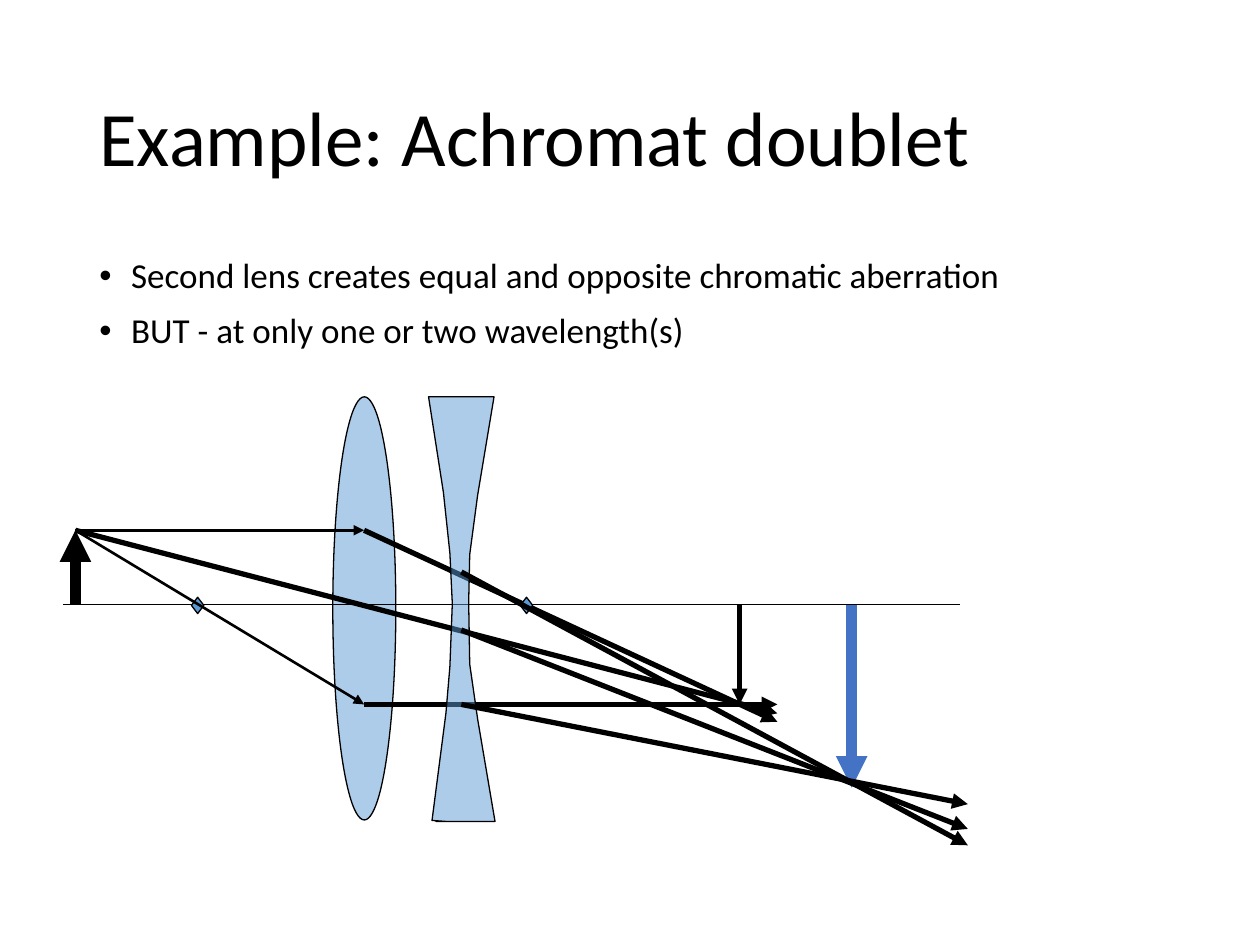
from lxml.etree import SubElement
from pptx import Presentation
from pptx.dml.color import RGBColor
from pptx.enum.shapes import MSO_CONNECTOR, MSO_SHAPE
from pptx.enum.text import MSO_ANCHOR, MSO_AUTO_SIZE, PP_ALIGN
from pptx.oxml.ns import qn
from pptx.util import Cm, Pt

COLORS = {"ink": "000000", "glass": "5B9BD5", "image": "4472C4"}

# Main positions in cm
AXIS, TOP, LOW = 12.19, 10.69, 14.2
OBJ, LENS, SECOND = 1.52, 7.34, 9.3
STOP, END = 15.67, 19.51


class Sketch:
    def __init__(self, slide, font="Calibri"):
        self.slide = slide
        self.shapes = slide.shapes
        self.font = font

    def color(self, name):
        return RGBColor.from_string(COLORS[name])

    def text(self, holder, box, lines, size, anchor, bullet=False):
        holder.left, holder.top, holder.width, holder.height = map(Cm, box)
        frame = holder.text_frame
        frame.text = "\n".join(lines)
        frame.auto_size = MSO_AUTO_SIZE.NONE
        frame.word_wrap = True
        frame.vertical_anchor = anchor
        for i, para in enumerate(frame.paragraphs):
            para.alignment = PP_ALIGN.LEFT
            para.line_spacing = 0.9
            para.space_before = Pt(size / 2 if i else 0)
            if bullet:
                props = para._p.get_or_add_pPr()
                props.set("marL", str(Cm(0.64)))
                props.set("indent", str(-Cm(0.64)))
                SubElement(props, qn("a:buFont"), typeface="Arial")
                SubElement(props, qn("a:buChar"), char="•")
            for run in para.runs:
                run.font.name = self.font
                run.font.size = Pt(size)
                run.font.color.rgb = self.color("ink")

    def paint(self, shape, alpha=100):
        shape.shadow.inherit = False
        shape.fill.solid()
        shape.fill.fore_color.rgb = self.color("glass")
        shape.line.color.rgb = self.color("ink")
        shape.line.width = Pt(0.75)
        if alpha < 100:
            tint = shape.fill._xPr.find(qn("a:solidFill"))[0]
            SubElement(tint, qn("a:alpha"), val=str(alpha * 1000))

    def shape(self, kind, box, alpha=100):
        self.paint(self.shapes.add_shape(kind, *map(Cm, box)), alpha)

    def outline(self, points, alpha):
        points = [(Cm(x), Cm(y)) for x, y in points]
        form = self.shapes.build_freeform(*points[0])
        form.add_line_segments(points[1:], close=True)
        self.paint(form.convert_to_shape(), alpha)

    def line(self, x1, y1, x2, y2, width=3, color="ink", arrow=True):
        ray = self.shapes.add_connector(
            MSO_CONNECTOR.STRAIGHT, Cm(x1), Cm(y1), Cm(x2), Cm(y2))
        ray.line.color.rgb = self.color(color)
        ray.line.width = Pt(width)
        if arrow:
            SubElement(ray.line._get_or_add_ln(), qn("a:tailEnd"), type="triangle")
        SubElement(ray._element.spPr, qn("a:effectLst"))


def main():
    deck = Presentation()
    deck.slide_width, deck.slide_height = Cm(25.4), Cm(19.05)
    slide = deck.slides.add_slide(deck.slide_layouts[1])
    art = Sketch(slide)

    # Title and bullets
    art.text(slide.shapes.title, (1.75, 1.02, 21.89, 3.68),
             ["Example: Achromat doublet"], 44, MSO_ANCHOR.MIDDLE)
    art.text(slide.placeholders[1], (1.75, 5.08, 21.89, 12.09),
             ["Second lens creates equal and opposite chromatic aberration",
              "BUT - at only one or two wavelength(s)"],
             20, MSO_ANCHOR.TOP, bullet=True)

    # First lens and the rays it bends
    art.shape(MSO_SHAPE.OVAL, (6.71, 8, 1.27, 8.53), alpha=50)
    art.line(OBJ, TOP, STOP, 14.38)
    art.line(LENS, TOP, STOP, 14.55)
    art.line(LENS, LOW, STOP, LOW)

    # Axis and focal points
    art.line(1.27, AXIS, 19.35, AXIS, 0.75, arrow=False)
    for x in (10.49, 3.86):
        art.shape(MSO_SHAPE.DIAMOND, (x, 12.04, 0.25, 0.33))

    # Object, incoming rays and first image
    art.line(OBJ, AXIS, OBJ, TOP, 6)
    for y in (TOP, LOW):
        art.line(OBJ, TOP, LENS, y, 1.5)
    art.line(14.91, AXIS, 14.91, LOW)
    art.line(1.6, TOP, 7.29, AXIS, 1, arrow=False)

    # Second lens
    art.outline([
        (8.79, 16.56), (9.98, 16.56), (9.63, 14.5), (9.47, 13.39),
        (9.45, 12.14), (9.47, 11.18), (9.63, 9.98), (9.96, 8),
        (8.64, 8), (8.94, 9.93), (9.07, 11.15), (9.12, 12.17),
        (9.07, 13.44), (8.99, 14.38), (8.71, 16.54), (8.99, 16.56),
    ], alpha=50)

    # Final image and outgoing rays
    art.line(17.17, AXIS, 17.17, 15.88, 6, "image")
    for y1, y2 in ((11.53, 17.04), (12.7, 16.71), (LOW, 16.21)):
        art.line(SECOND, y1, END, y2)

    deck.save("out.pptx")


if __name__ == "__main__":
    main()
